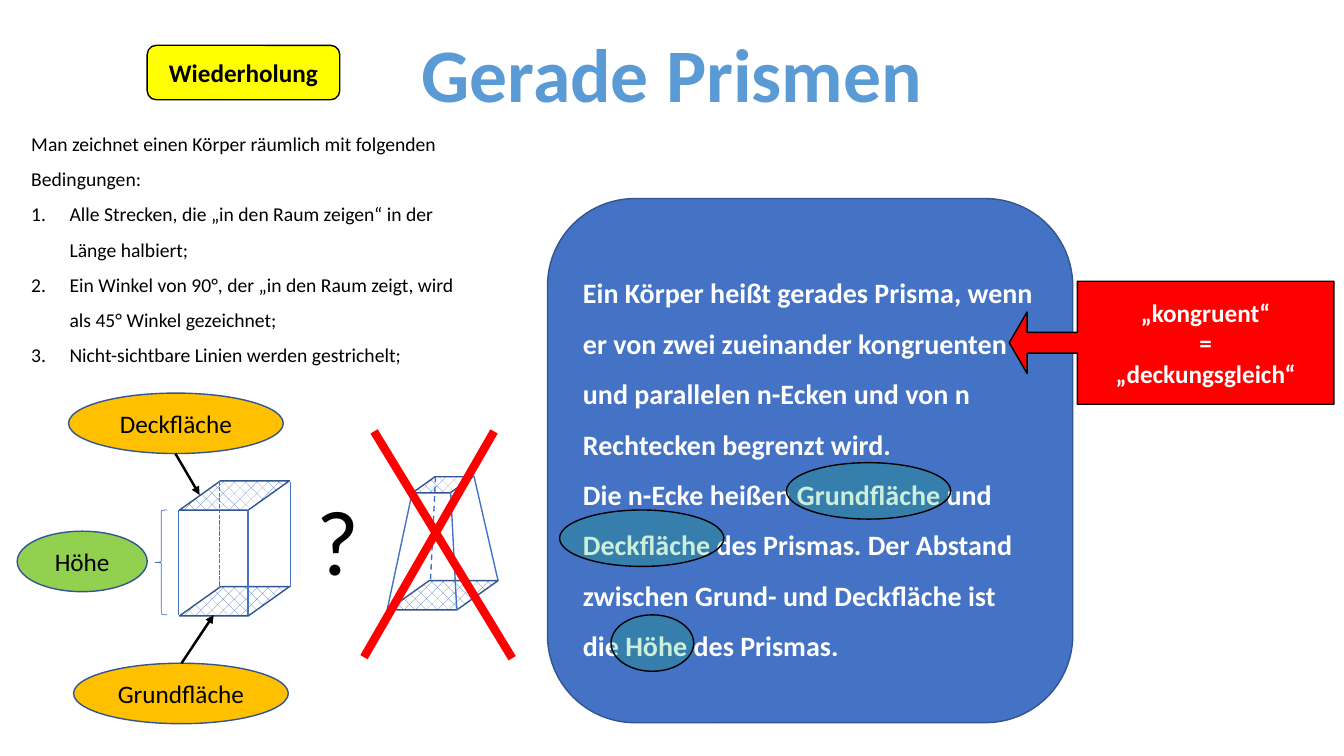
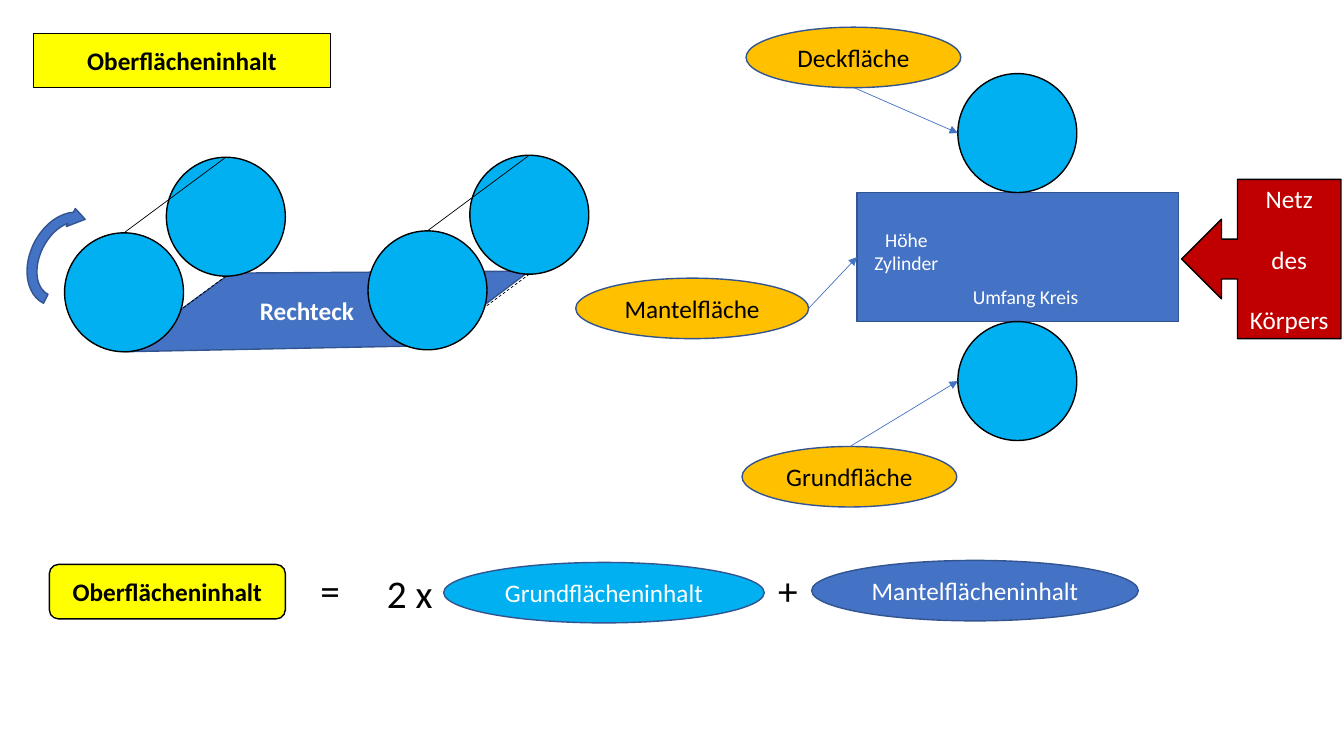
import lxml.etree
import pptx
import pptx.dml.color
import pptx.enum.dml
import pptx.enum.shapes
import pptx.enum.text
import pptx.oxml.ns
import pptx.util

RGB = pptx.dml.color.RGBColor
SHAPE = pptx.enum.shapes.MSO_SHAPE
DASH = pptx.enum.dml.MSO_LINE
ALIGN = pptx.enum.text.PP_ALIGN
ANCHOR = pptx.enum.text.MSO_ANCHOR
FIT = pptx.enum.text.MSO_AUTO_SIZE
Pt = pptx.util.Pt
qn = pptx.oxml.ns.qn

EMU_PER_PX = 9144  # 100 px to the inch
FONT = "Calibri"
BLACK = RGB(0x00, 0x00, 0x00)
WHITE = RGB(0xFF, 0xFF, 0xFF)
BLUE = RGB(0x44, 0x72, 0xC4)
EDGE = RGB(0x32, 0x54, 0x91)
TITLE_BLUE = RGB(0x5B, 0x9B, 0xD5)
CYAN = RGB(0x00, 0xB0, 0xF0)
YELLOW = RGB(0xFF, 0xFF, 0x00)
ORANGE = RGB(0xFF, 0xC0, 0x00)
LIME = RGB(0x92, 0xD0, 0x50)
GREEN = RGB(0x00, 0xB0, 0x50)
RED = RGB(0xFF, 0x00, 0x00)
DARK_RED = RGB(0xC0, 0x00, 0x00)

CIRCLE = 118
SKEW = 1.404


def px(length):
    return pptx.util.Emu(round(length * EMU_PER_PX))


def place(shape, box):
    shape.left, shape.top, shape.width, shape.height = map(px, box)


def write(shape, paragraphs, size=18, color=BLACK, bold=False,
          align=ALIGN.CENTER, spacing=1.0, gap=0):
    frame = shape.text_frame
    for number, words in enumerate(paragraphs):
        paragraph = frame.paragraphs[0] if number == 0 else frame.add_paragraph()
        paragraph.alignment = align
        paragraph.line_spacing = spacing
        paragraph.space_before = Pt(gap if number else 0)
        run = paragraph.add_run()
        run.text = words
        run.font.name = FONT
        run.font.size = Pt(size)
        run.font.bold = bold
        run.font.color.rgb = color


def paint(shape, fill, edge=EDGE, width=1):
    if fill is None:
        shape.fill.background()
    else:
        shape.fill.solid()
        shape.fill.fore_color.rgb = fill
    shape.line.color.rgb = edge
    shape.line.width = Pt(width)
    shape.shadow.inherit = False


def add_figure(slide, kind, box, fill, edge=EDGE, width=1, adjustments=()):
    figure = slide.shapes.add_shape(kind, *map(px, box))
    for number, value in enumerate(adjustments):
        figure.adjustments[number] = value
    paint(figure, fill, edge, width)
    return figure


def add_label(slide, box, paragraphs, size, color=BLACK, bold=False, align=ALIGN.LEFT):
    label = slide.shapes.add_textbox(*map(px, box))
    label.text_frame.word_wrap = False
    label.text_frame.auto_size = FIT.SHAPE_TO_FIT_TEXT
    write(label, paragraphs, size, color, bold, align)


def add_line(slide, start, end, color=BLUE, width=1, dash=None, arrow=False):
    line = slide.shapes.add_connector(
        pptx.enum.shapes.MSO_CONNECTOR.STRAIGHT, *map(px, start + end))
    line.line.color.rgb = color
    line.line.width = Pt(width)
    if dash is not None:
        line.line.dash_style = dash
    properties = line.element.spPr
    if arrow:
        lxml.etree.SubElement(properties.find(qn("a:ln")), qn("a:tailEnd"), type="triangle")
    lxml.etree.SubElement(properties, qn("a:effectLst"))
    return line


def add_bubble(slide, box, words, fill=ORANGE, color=BLACK):
    bubble = add_figure(slide, SHAPE.OVAL, box, fill)
    write(bubble, [words], color=color)
    return bubble


def style_badge(badge, words):
    paint(badge, YELLOW, BLACK)
    write(badge, [words], bold=True)


def add_badge(slide, box, words):
    style_badge(slide.shapes.add_shape(SHAPE.ROUNDED_RECTANGLE, *map(px, box)), words)


def add_highlight(slide, box):
    highlight = add_figure(slide, SHAPE.OVAL, box, GREEN, BLACK)
    tint = highlight.element.spPr.find(qn("a:solidFill"))[0]
    lxml.etree.SubElement(tint, qn("a:alpha"), val="20000")


def add_face(slide, box):
    """Hatched top or bottom face of a solid."""
    face = add_figure(slide, SHAPE.PARALLELOGRAM, box, WHITE, adjustments=[SKEW])
    face.fill.patterned()
    face.fill.pattern = pptx.enum.dml.MSO_PATTERN.PERCENT_25
    face.fill.fore_color.rgb = BLUE
    face.fill.back_color.rgb = WHITE


def add_prism(slide):
    bottom, height = 582, 105
    for top in (bottom, bottom - height):
        add_face(slide, (178, top, 109, 29))
    for x, y, dash in ((177, 610, None), (246, 610, None), (288, 582, None),
                       (218, 581, DASH.SQUARE_DOT)):
        add_line(slide, (x, y), (x, y - 104), dash=dash)


def add_crossed_out_frustum(slide):
    add_face(slide, (385, 576, 109, 29))
    add_face(slide, (409, 473, 60, 16))
    for top, base, dash in (((409, 488), (384, 605), None),
                            ((447, 488), (453, 605), None),
                            ((470, 472), (494, 576), None),
                            ((432, 473), (427, 576), DASH.DASH)):
        add_line(slide, top, base, dash=dash)
    add_line(slide, (371, 428), (508, 653), RED, 6)
    add_line(slide, (490, 428), (361, 652), RED, 6)


def add_circle(slide, x, y):
    add_figure(slide, SHAPE.OVAL, (x, y, CIRCLE, CIRCLE), CYAN, BLACK)


def add_circle_pair(slide, x, y):
    """Back circle at x, y, joined to a front circle further left and down."""
    front_x, front_y = x - 101, y + 75
    radius = CIRCLE // 2
    add_circle(slide, x, y)
    for drop, dash in ((0, None), (CIRCLE, DASH.DASH)):
        add_line(slide, (x + radius, y + drop), (front_x + radius, front_y + drop),
                 BLACK, 0.5, dash)
    add_circle(slide, front_x, front_y)


def add_rolled_cylinder(slide):
    outline = slide.shapes.build_freeform(px(122), px(349), scale=1.0)
    corners = ((229, 271), (525, 269), (427, 343))
    outline.add_line_segments([tuple(map(px, corner)) for corner in corners], close=True)
    paint(outline.convert_to_shape(), BLUE)
    add_circle_pair(slide, 165, 156)
    add_circle_pair(slide, 466, 154)
    add_label(slide, (248, 288, 114, 40), ["Rechteck"], 18, WHITE, True)
    turn = add_figure(slide, SHAPE.CIRCULAR_ARROW, (11, 217, 108, 80), BLUE)
    turn.rotation = 296.4


def fill_conditions(body):
    """Opening sentence followed by a numbered list."""
    place(body, (21, 114, 463, 254))
    body.text_frame.auto_size = FIT.NONE
    write(body, [
        "Man zeichnet einen Körper räumlich mit folgenden Bedingungen:",
        "Alle Strecken, die „in den Raum zeigen“ in der Länge halbiert;",
        "Ein Winkel von 90°, der „in den Raum zeigt, wird als 45° Winkel gezeichnet;",
        "Nicht-sichtbare Linien werden gestrichelt;",
    ], size=14, align=ALIGN.LEFT, spacing=1.5)
    for number, paragraph in enumerate(body.text_frame.paragraphs):
        properties = paragraph._p.get_or_add_pPr()
        indent = px(38) if number else 0
        properties.set("marL", str(indent))
        properties.set("indent", str(-indent))
        if number:
            lxml.etree.SubElement(properties, qn("a:buFont"), typeface="+mj-lt")
            lxml.etree.SubElement(properties, qn("a:buAutoNum"), type="arabicPeriod")
        else:
            lxml.etree.SubElement(properties, qn("a:buNone"))


def build_prisms(deck):
    slide = deck.slides.add_slide(deck.slide_layouts[1])
    title = slide.shapes.title
    place(title, (406, 21, 521, 101))
    title.text_frame.word_wrap = False
    title.text_frame.auto_size = FIT.NONE
    write(title, ["Gerade Prismen"], 54, TITLE_BLUE, True)
    add_badge(slide, (146, 45, 191, 54), "Wiederholung")
    fill_conditions(slide.placeholders[1])

    add_prism(slide)
    add_crossed_out_frustum(slide)
    add_label(slide, (304, 474, 63, 121), ["?"], 66)

    definition = add_figure(slide, SHAPE.ROUNDED_RECTANGLE, (543, 197, 521, 520), BLUE)
    write(definition, [
        "Ein Körper heißt gerades Prisma, wenn er von zwei zueinander kongruenten "
        "und parallelen n-Ecken und von n Rechtecken begrenzt wird.",
        "Die n-Ecke heißen Grundfläche und Deckfläche des Prismas. Der Abstand "
        "zwischen Grund- und Deckfläche ist die Höhe des Prismas.",
    ], 20, WHITE, True, ALIGN.LEFT, 1.5)
    congruent = add_figure(slide, SHAPE.LEFT_ARROW_CALLOUT, (1001, 279, 322, 122), RED,
                           BLACK, adjustments=(0.169, 0.25, 0.145, 0.79))
    write(congruent, ["„kongruent“", "=", "„deckungsgleich“"], color=WHITE, bold=True)
    for box in ((780, 459, 163, 56), (555, 506, 163, 56), (606, 610, 82, 56)):
        add_highlight(slide, box)

    add_bubble(slide, (73, 658, 213, 60), "Grundfläche")
    add_line(slide, (180, 658), (212, 610), BLACK, 1.75, arrow=True)
    add_bubble(slide, (68, 390, 213, 60), "Deckfläche")
    add_line(slide, (174, 450), (198, 491), BLACK, 1.75, arrow=True)
    add_figure(slide, SHAPE.LEFT_BRACE, (154, 506, 12, 104), None, BLUE, 0.5)
    add_bubble(slide, (17, 527, 129, 60), "Höhe", LIME)


def add_net(slide):
    mantle = add_figure(slide, SHAPE.RECTANGLE, (850, 191, 319, 128), BLUE)
    for y in (191 - CIRCLE, 191 + 128):
        add_circle(slide, 950, y)
    net = add_figure(slide, SHAPE.LEFT_ARROW_CALLOUT, (1172, 178, 158, 158), DARK_RED, BLACK)
    write(net, ["Netz", "des", "Körpers"], color=WHITE, gap=21.6)
    add_label(slide, (955, 278, 126, 34), ["Umfang Kreis"], 14, WHITE)
    add_label(slide, (857, 221, 84, 57), ["Höhe", "Zylinder"], 14, WHITE, align=ALIGN.CENTER)
    add_bubble(slide, (740, 27, 213, 60), "Deckfläche")
    add_bubble(slide, (736, 443, 213, 60), "Grundfläche")
    add_bubble(slide, (571, 276, 231, 60), "Mantelfläche")
    add_line(slide, (847, 87), (950, 132), width=0.5, arrow=True)
    add_line(slide, (843, 443), (950, 378), width=0.5, arrow=True)
    to_mantle = add_line(slide, (802, 306), (850, 255), width=0.5, arrow=True)
    to_mantle.end_connect(mantle, 1)


def add_formula(slide):
    add_badge(slide, (49, 560, 234, 54), "Oberflächeninhalt")
    add_label(slide, (308, 557, 40, 57), ["="], 28)
    add_label(slide, (374, 560, 66, 57), ["2 x"], 28)
    add_bubble(slide, (440, 558, 318, 60), "Grundflächeninhalt", CYAN, WHITE)
    add_label(slide, (762, 557, 40, 57), ["+"], 28)
    add_bubble(slide, (805, 556, 324, 60), "Mantelflächeninhalt", BLUE, WHITE)


def build_surface(deck):
    slide = deck.slides.add_slide(deck.slide_layouts[5])
    title = slide.shapes.title
    place(title, (33, 33, 295, 54))
    outline = lxml.etree.Element(qn("a:prstGeom"), prst="roundRect")
    lxml.etree.SubElement(outline, qn("a:avLst"))
    title.element.spPr.insert(1, outline)
    title.text_frame.vertical_anchor = ANCHOR.MIDDLE
    title.text_frame.auto_size = FIT.NONE
    style_badge(title, "Oberflächeninhalt")
    add_rolled_cylinder(slide)
    add_net(slide)
    add_formula(slide)


def main():
    deck = pptx.Presentation()
    deck.slide_width, deck.slide_height = px(1333), px(750)
    build_prisms(deck)
    build_surface(deck)
    deck.save("out.pptx")


if __name__ == "__main__":
    main()
